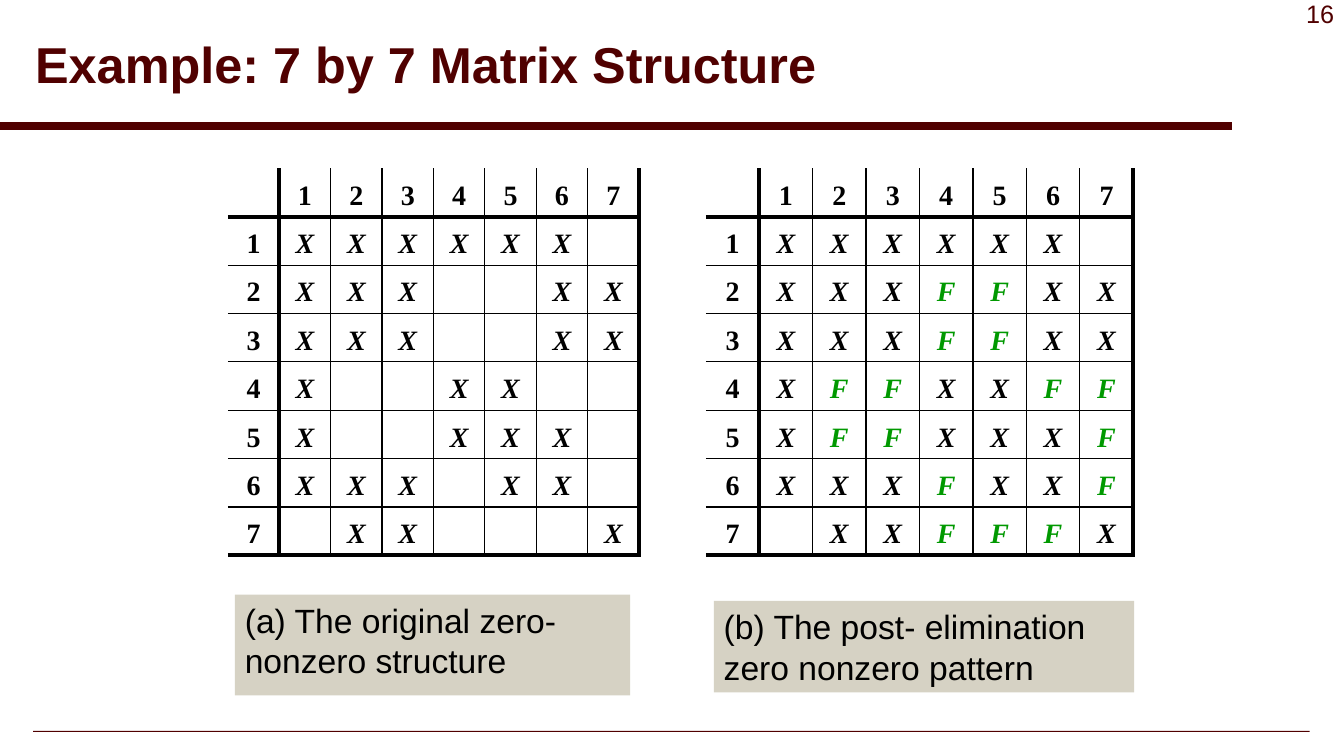
from dataclasses import dataclass

from lxml.etree import SubElement
from pptx import Presentation
from pptx.dml.color import RGBColor as Color
from pptx.enum.shapes import MSO_CONNECTOR as Connector, MSO_SHAPE as Shape
from pptx.enum.text import MSO_ANCHOR as Anchor, PP_ALIGN as Align
from pptx.oxml.ns import qn
from pptx.util import Inches, Pt


@dataclass(frozen=True)
class Theme:
    maroon: str = "500000"
    black: str = "000000"
    fill_in: str = "009900"
    sand: str = "D6D2C4"
    sans: str = "Arial"
    serif: str = "Times New Roman"
    title_size: int = 36
    caption_size: int = 24
    matrix_size: int = 20
    number_size: int = 18
    rule_width: int = 6
    thick: int = 3
    thin: int = 1


class SlideBuilder:
    def __init__(self, slide, theme):
        self.slide = slide
        self.theme = theme

    def add_words(self, frame, text, size, color, font=None, bold=False,
                  italic=False, align=Align.LEFT, spacing=None):
        para = frame.paragraphs[0]
        para.alignment = align
        if spacing:
            para.line_spacing = spacing
        span = para.add_run()
        span.text = text
        span.font.name = font or self.theme.sans
        span.font.size = Pt(size)
        span.font.bold = bold
        span.font.italic = italic
        span.font.color.rgb = Color.from_string(color)

    def text(self, place, text, size, anchor=Anchor.TOP, **style):
        box = self.slide.shapes.add_textbox(*map(Inches, place))
        box.text_frame.word_wrap = True
        box.text_frame.vertical_anchor = anchor
        self.add_words(box.text_frame, text, size, self.theme.maroon, **style)

    def panel(self, place, color):
        box = self.slide.shapes.add_shape(Shape.RECTANGLE, *map(Inches, place))
        box.shadow.inherit = False
        box.fill.solid()
        box.fill.fore_color.rgb = Color.from_string(color)
        box.line.fill.background()
        return box

    def caption(self, place, text, anchor):
        frame = self.panel(place, self.theme.sand).text_frame
        frame.word_wrap = True
        frame.vertical_anchor = anchor
        self.add_words(frame, text, self.theme.caption_size, self.theme.black)

    def rule(self, left, top, right):
        line = self.slide.shapes.add_connector(
            Connector.STRAIGHT, Inches(left), Inches(top), Inches(right), Inches(top))
        line.line.color.rgb = Color.from_string(self.theme.maroon)
        line.line.width = Pt(self.theme.rule_width)
        SubElement(line._element.spPr, qn("a:effectLst"))

    def border(self, cell, side, width):
        """Draw one cell edge; a width of 0 leaves it open."""
        properties = cell._tc.get_or_add_tcPr()
        edge = SubElement(properties, qn(f"a:ln{side}"), w=str(Pt(width)))
        if width:
            fill = SubElement(edge, qn("a:solidFill"))
            SubElement(fill, qn("a:srgbClr"), val=self.theme.black)
        else:
            SubElement(edge, qn("a:noFill"))

    def matrix(self, left, top, column, row, pattern):
        """Draw a numbered matrix; a dot in the pattern is a zero entry."""
        theme = self.theme
        count = len(pattern) + 1
        numbers = "".join(str(n) for n in range(1, count))
        lines = ["." + numbers] + [n + line for n, line in zip(numbers, pattern)]
        table = self.slide.shapes.add_table(
            count, count, Inches(left), Inches(top),
            Inches(column * count), Inches(row * count)).table
        table.first_row = table.horz_banding = False
        for size in table.columns:
            size.width = Inches(column)
        for size in table.rows:
            size.height = Inches(row)

        # Edge 0 is open; the header edge and the last edge are thick
        edges = [0, theme.thick] + [theme.thin] * (count - 2) + [theme.thick]
        for r, line in enumerate(lines):
            for c, mark in enumerate(line):
                cell = table.cell(r, c)
                for side, width in zip("LRTB", (edges[c], edges[c + 1],
                                                edges[r], edges[r + 1])):
                    self.border(cell, side, width)
                cell.fill.background()
                cell.vertical_anchor = Anchor.MIDDLE
                cell.margin_left = cell.margin_right = Inches(0.05)
                cell.margin_top = cell.margin_bottom = Inches(0.04)
                if mark != ".":
                    self.add_words(cell.text_frame, mark, theme.matrix_size,
                                   theme.fill_in if mark == "F" else theme.black,
                                   font=theme.serif, bold=True, italic=mark in "XF",
                                   align=Align.CENTER, spacing=1.2)


ORIGINAL_PATTERN = ["XXXXXX.", "XXX..XX", "XXX..XX", "X..XX..",
                    "X..XXX.", "XXX.XX.", ".XX...X"]
ELIMINATED_PATTERN = ["XXXXXX.", "XXXFFXX", "XXXFFXX", "XFFXXFF",
                      "XFFXXXF", "XXXFXXF", ".XXFFFX"]


def main():
    deck = Presentation()
    deck.slide_width, deck.slide_height = Inches(13.33), Inches(7.5)
    theme = Theme()
    page = SlideBuilder(deck.slides.add_slide(deck.slide_layouts[6]), theme)

    # Page frame: footer line, header rule, slide number
    page.panel((0.33, 7.25, 12.66, 0.01), theme.maroon)
    page.rule(0, 1.25, 12.22)
    page.text((12.13, -0.07, 1.2, 0.4), "16", theme.number_size, align=Align.RIGHT)

    # Title
    page.text((0.25, 0.08, 11.92, 1.17), "Example: 7 by 7 Matrix Structure",
              theme.title_size, anchor=Anchor.MIDDLE, bold=True, spacing=0.9)

    # Matrix before elimination
    page.matrix(2.26, 1.67, 0.51, 0.47, ORIGINAL_PATTERN)
    page.caption((2.33, 5.9, 3.92, 1), "(a) The original zero-nonzero structure",
                 Anchor.TOP)

    # Matrix after elimination, with fill-ins in green
    page.matrix(7, 1.67, 0.53, 0.47, ELIMINATED_PATTERN)
    page.caption((7.08, 5.96, 4.17, 0.91),
                 "(b) The post- elimination zero nonzero pattern", Anchor.MIDDLE)

    deck.save("out.pptx")


if __name__ == "__main__":
    main()
